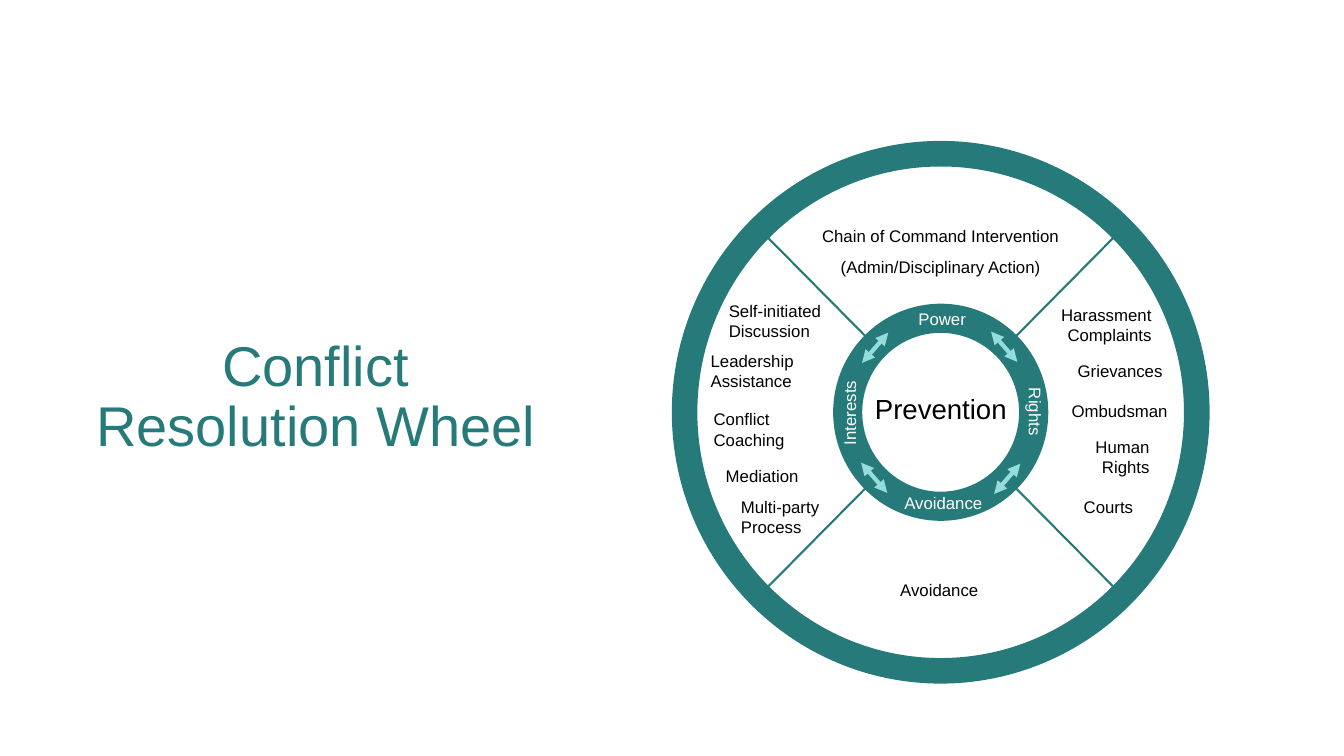
"""Build the Conflict Resolution Wheel slide."""
from dataclasses import dataclass

from lxml.etree import SubElement
from pptx import Presentation
from pptx.dml.color import RGBColor
from pptx.enum.shapes import MSO_CONNECTOR, MSO_SHAPE
from pptx.enum.text import MSO_ANCHOR, MSO_AUTO_SIZE, PP_ALIGN
from pptx.oxml.ns import qn
from pptx.util import Inches, Pt


@dataclass(frozen=True)
class Theme:
    font: str = "Arial"
    teal: str = "277A7A"
    aqua: str = "95DDDD"
    white: str = "FFFFFF"
    black: str = "000000"
    title: float = 40
    hub: float = 19.7
    label: float = 12
    rim: float = 1
    spoke: float = 1.5
    arrow: float = 3


T = Theme()
LEFT, CENTER, RIGHT = PP_ALIGN.LEFT, PP_ALIGN.CENTER, PP_ALIGN.RIGHT

TITLE = "Conflict Resolution Wheel"
TITLE_BOX = (0.85, 2.08, 4.56, 3.74)
WHEEL_CENTER = (9.33, 4.09)
OUTER_DISCS = [(5.32, 5.37, T.teal), (4.84, 4.89, T.white), (2.12, 2.14, T.teal)]
HUB_DISC = (1.57, 1.59, T.white)
SPOKE_REACH = (1.88, 1.9)
ARROW_REACH = (0.13, 0.15)
ARROWS = [(9.96, 3.44, 1), (8.67, 4.74, 1), (8.68, 3.45, -1), (9.99, 4.75, -1)]

HUB_LABEL = ("Prevention", 8.58, 3.84, 1.53, 0.43)
RING_LABELS = [
    ("Avoidance", 8.87, 4.84, 0.99, 0),
    ("Power", 9.01, 3.01, 0.68, 0),
    ("Interests", 8.0, 3.94, 0.85, 270),
    ("Rights", 9.93, 3.94, 0.68, 90),
]
POWER_OPTIONS = ["Chain of Command Intervention", "(Admin/Disciplinary Action)"]
POWER_BOX = (8.03, 2.19, 2.6, 0.62)
OPTIONS = [
    ("Self-initiated Discussion", 7.13, 2.93, 1.17, 0.51, LEFT),
    ("Leadership Assistance", 6.95, 3.43, 1.17, 0.51, LEFT),
    ("Conflict Coaching", 6.98, 4.01, 1.17, 0.51, LEFT),
    ("Mediation", 7.1, 4.57, 1.17, 0.3, LEFT),
    ("Multi-party Process", 7.25, 4.88, 1.17, 0.51, LEFT),
    ("Avoidance", 8.83, 5.7, 1.02, 0.3, LEFT),
    ("Grievances", 10.59, 3.53, 1.17, 0.3, LEFT),
    ("Harassment Complaints", 10.35, 2.97, 1.17, 0.51, RIGHT),
    ("Ombudsman", 10.53, 3.93, 1.17, 0.3, LEFT),
    ("Human Rights", 10.4, 4.28, 1.1, 0.51, RIGHT),
    ("Courts", 10.65, 4.88, 1.17, 0.3, LEFT),
]


def apply(target, formats):
    for name, value in formats.items():
        setattr(target, name, value)


def write(tf, lines, size, color, align, **paragraph_formats):
    for i, line in enumerate(lines):
        p = tf.add_paragraph() if i else tf.paragraphs[0]
        apply(p, {"alignment": align, **paragraph_formats})
        r = p.add_run()
        r.text = line
        apply(r.font, {"name": T.font, "size": Pt(size)})
        r.font.color.rgb = RGBColor.from_string(color)


def add_title(s):
    sp = s.shapes.title
    apply(sp, dict(zip(("left", "top", "width", "height"), map(Inches, TITLE_BOX))))
    apply(sp.text_frame, {"word_wrap": True, "auto_size": MSO_AUTO_SIZE.NONE,
                          "vertical_anchor": MSO_ANCHOR.MIDDLE})
    write(sp.text_frame, [TITLE], T.title, T.teal, CENTER, line_spacing=0.9)


def add_disc(shapes, w, h, color):
    cx, cy = WHEEL_CENTER
    box = map(Inches, (cx - w / 2, cy - h / 2, w, h))
    sp = shapes.add_shape(MSO_SHAPE.OVAL, *box)
    sp.shadow.inherit = False
    sp.fill.solid()
    sp.fill.fore_color.rgb = RGBColor.from_string(color)
    sp.line.color.rgb = RGBColor.from_string(T.teal)
    sp.line.width = Pt(T.rim)


def add_line(shapes, center, reach, slope, color, width, heads=False):
    (cx, cy), (dx, dy) = center, reach
    dy *= slope
    ends = map(Inches, (cx - dx, cy - dy, cx + dx, cy + dy))
    line = shapes.add_connector(MSO_CONNECTOR.STRAIGHT, *ends)
    line.line.color.rgb = RGBColor.from_string(color)
    line.line.width = Pt(width)
    if heads:
        ln = line.line._get_or_add_ln()
        for end in ("a:headEnd", "a:tailEnd"):
            SubElement(ln, qn(end), type="triangle")
    SubElement(line._element.spPr, qn("a:effectLst"))


def add_label(shapes, lines, box, size=T.label, color=T.black, align=LEFT,
              wrap=True, rotation=0):
    sp = shapes.add_textbox(*map(Inches, box))
    sp.rotation = rotation
    apply(sp.text_frame, {"word_wrap": wrap, "auto_size": MSO_AUTO_SIZE.SHAPE_TO_FIT_TEXT})
    write(sp.text_frame, lines, size, color, align, space_after=Pt(8))


def add_wheel(s):
    shapes = s.shapes.add_group_shape().shapes
    for disc in OUTER_DISCS:
        add_disc(shapes, *disc)
    for slope in (1, -1):
        add_line(shapes, WHEEL_CENTER, SPOKE_REACH, slope, T.teal, T.spoke)
    add_disc(shapes, *HUB_DISC)
    text, *box = HUB_LABEL
    add_label(shapes, [text], box, size=T.hub, wrap=False)
    for text, x, y, w, rotation in RING_LABELS:
        add_label(shapes, [text], (x, y, w, 0.3), color=T.white, wrap=False, rotation=rotation)
    for x, y, slope in ARROWS:
        add_line(shapes, (x, y), ARROW_REACH, slope, T.aqua, T.arrow, heads=True)
    add_label(shapes, POWER_OPTIONS, POWER_BOX, align=CENTER, wrap=False)
    for text, *box, align in OPTIONS:
        add_label(shapes, [text], box, align=align)


def main():
    prs = Presentation()
    apply(prs, {"slide_width": Inches(13.33), "slide_height": Inches(7.5)})
    s = prs.slides.add_slide(prs.slide_layouts[5])
    add_title(s)
    add_wheel(s)
    prs.save("out.pptx")


if __name__ == "__main__":
    main()
